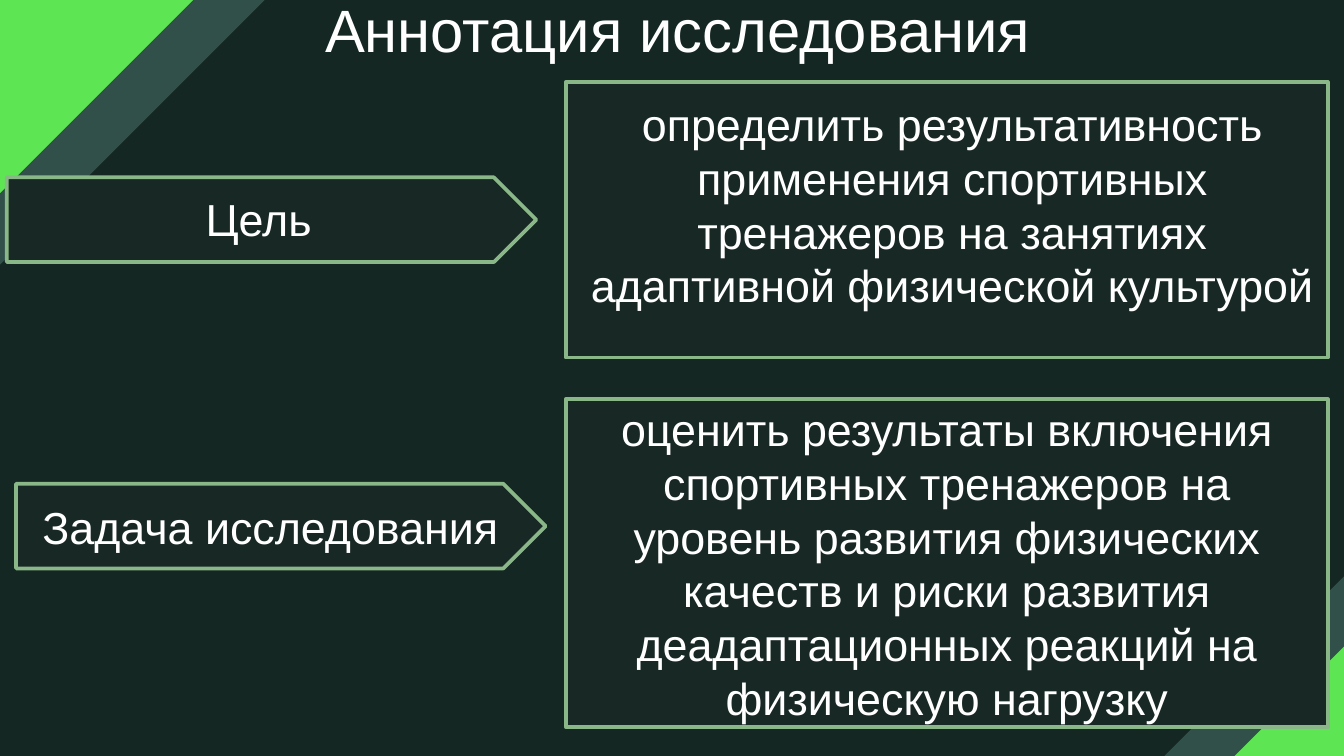
"""Build the research summary slide: a goal and a task, each with its text."""
import pptx
import pptx.dml.color
import pptx.enum.shapes
import pptx.enum.text
import pptx.util

Inches = pptx.util.Inches
Pt = pptx.util.Pt
KIND = pptx.enum.shapes.MSO_SHAPE
ALIGN = pptx.enum.text.PP_ALIGN
ANCHOR = pptx.enum.text.MSO_ANCHOR

HUES = {"back": "142723", "green": "5EE553", "band": "305049",
        "panel": "182825", "edge": "8AB787", "text": "FFFFFF"}
GOAL = ("определить результативность применения спортивных тренажеров "
        "на занятиях адаптивной физической культурой")
TASK = ("оценить результаты включения спортивных тренажеров на уровень "
        "развития физических качеств и риски развития деадаптационных "
        "реакций на физическую нагрузку")


def style(item, values):
    for name, value in values.items():
        setattr(item, name, value)


def paint(fill, hue):
    fill.solid()
    fill.fore_color.rgb = pptx.dml.color.RGBColor.from_string(HUES[hue])


def finish(shape, hue, edge=None):
    shape.shadow.inherit = False
    paint(shape.fill, hue)
    if edge:
        paint(shape.line.fill, edge)
        shape.line.width = Pt(2)
    else:
        shape.line.fill.background()


def write(shape, text, size=24, align=ALIGN.CENTER, anchor=ANCHOR.MIDDLE):
    frame = shape.text_frame
    style(frame, {"word_wrap": True, "vertical_anchor": anchor})
    para = frame.paragraphs[0]
    style(para, {"text": text, "alignment": align})
    font = para.runs[0].font
    style(font, {"name": "Arial", "size": Pt(size)})
    paint(font.fill, "text")


def label(slide, box, text, **form):
    shape = slide.shapes.add_textbox(*map(Inches, box))
    write(shape, text, anchor=ANCHOR.TOP, **form)


def panel(slide, kind, box, text=None):
    shape = slide.shapes.add_shape(kind, *map(Inches, box))
    finish(shape, "panel", "edge")
    if text:
        write(shape, text)


def corner(slide, left, top, side, turn):
    box = map(Inches, (left, top, side, side))
    shape = slide.shapes.add_shape(KIND.RIGHT_TRIANGLE, *box)
    shape.rotation = turn
    finish(shape, "green")


def band(slide, points):
    spots = [(Inches(x), Inches(y)) for x, y in points]
    pen = slide.shapes.build_freeform(*spots[0])
    pen.add_line_segments(spots[1:], close=True)
    finish(pen.convert_to_shape(), "band")


def main():
    deck = pptx.Presentation()
    wide = Inches(10)
    style(deck, {"slide_width": wide, "slide_height": wide * 9 // 16})
    slide = deck.slides.add_slide(deck.slide_layouts[6])
    paint(slide.background.fill, "back")

    corner(slide, 0, 0, 1.71, 90)
    corner(slide, 9.02, 4.66, 0.98, 270)
    band(slide, [(1.44, 0), (1.97, 0), (0, 1.97), (0, 1.44)])
    band(slide, [(10, 4.29), (10, 4.81), (9.18, 5.63), (8.66, 5.63)])

    label(slide, (2.32, -0.1, 5.59, 0.64), "Аннотация исследования",
          size=32, align=ALIGN.LEFT)
    panel(slide, KIND.PENTAGON, (0.05, 1.32, 3.94, 0.63))
    panel(slide, KIND.RECTANGLE, (4.21, 0.61, 5.67, 2.05))
    label(slide, (0.31, 1.38, 3.23, 0.5), "Цель")
    label(slide, (4.21, 0.67, 5.75, 1.72), GOAL)
    panel(slide, KIND.PENTAGON, (0.12, 3.6, 3.94, 0.63), "Задача исследования")
    panel(slide, KIND.RECTANGLE, (4.21, 2.97, 5.67, 2.44), TASK)
    deck.save("out.pptx")


if __name__ == "__main__":
    main()
